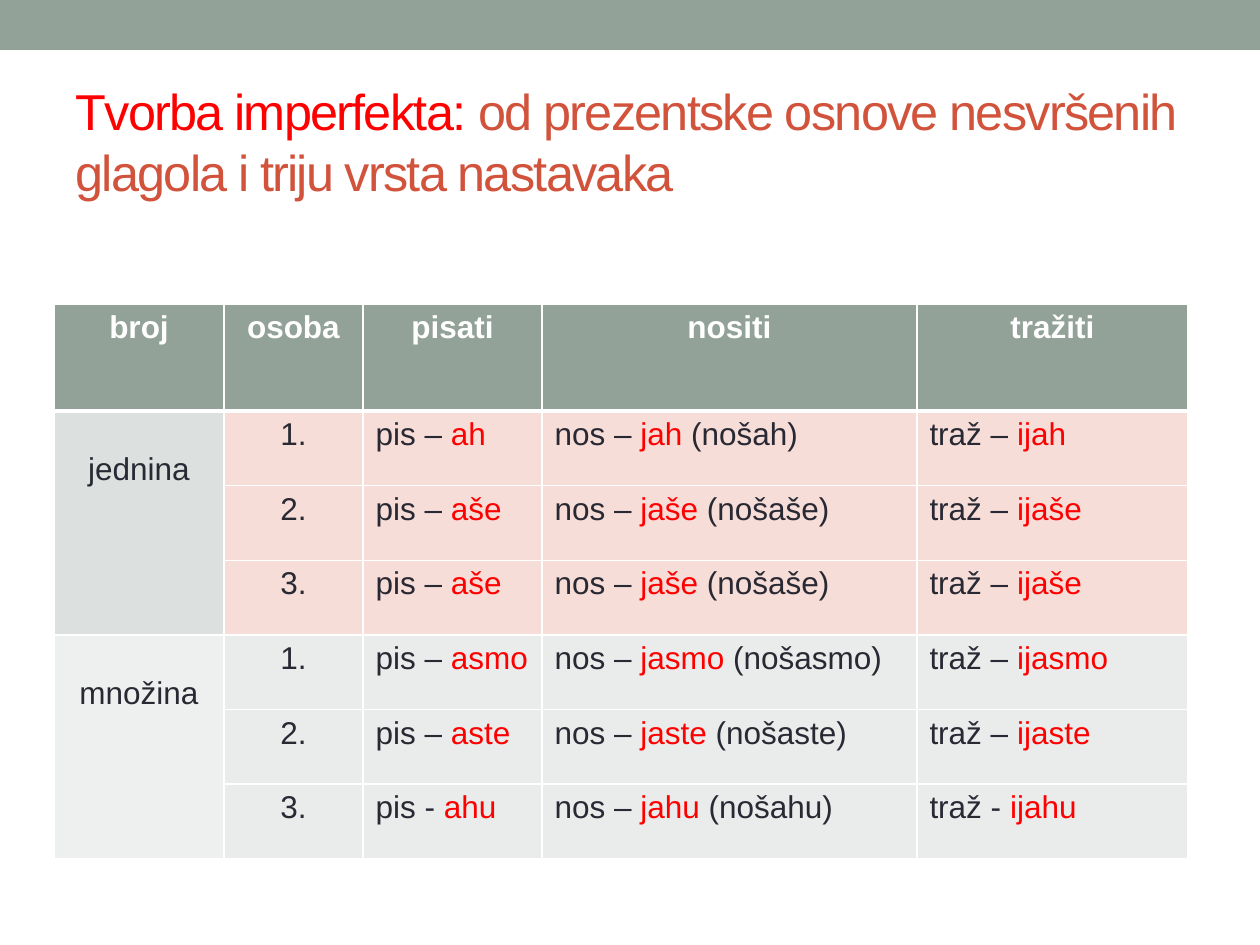
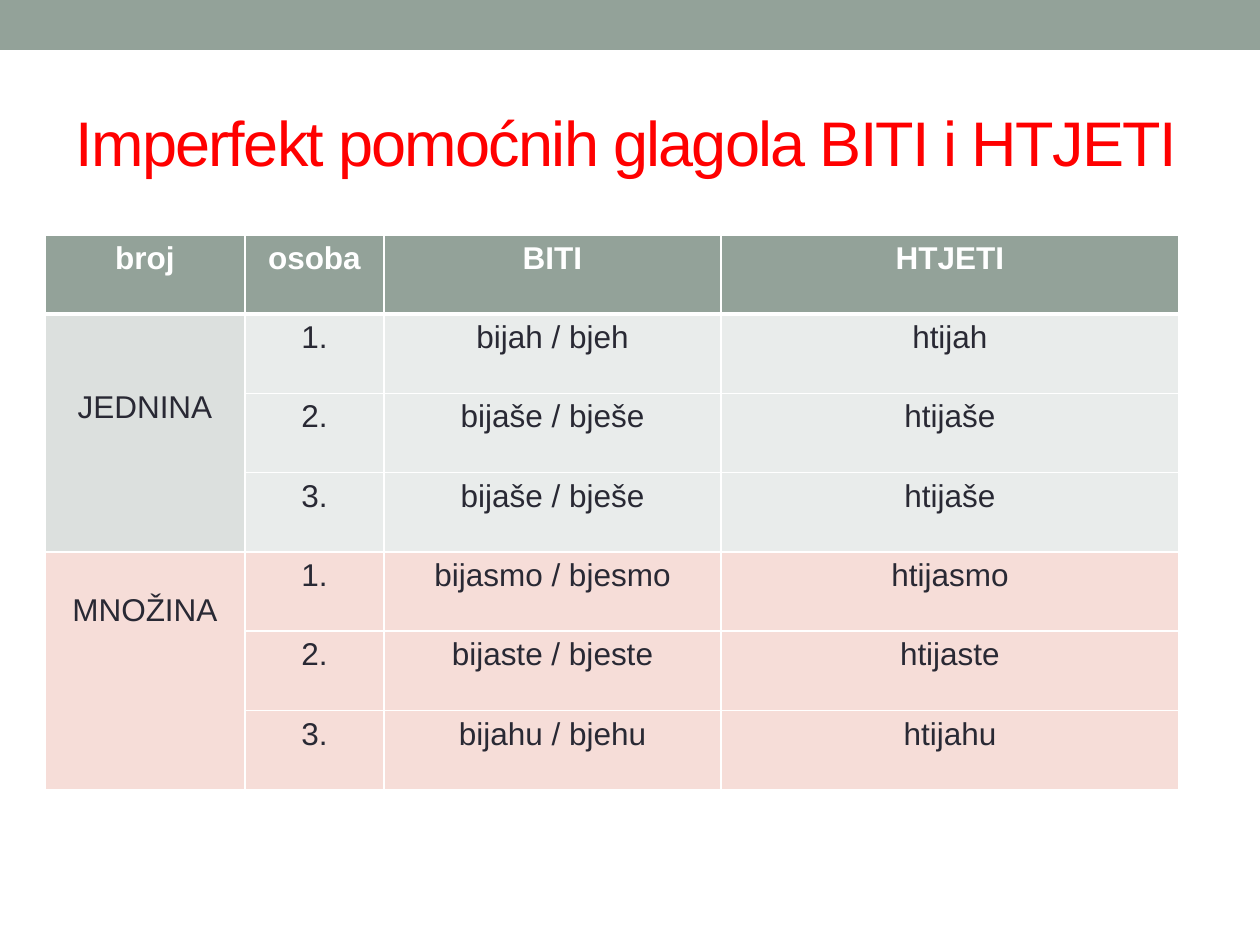
from lxml.etree import SubElement
from pptx import Presentation
from pptx.dml.color import RGBColor
from pptx.enum.shapes import MSO_SHAPE
from pptx.enum.text import MSO_ANCHOR, MSO_AUTO_SIZE, PP_ALIGN
from pptx.oxml.ns import qn
from pptx.util import Emu, Pt

COLORS = {
    "sage": "93A299", "white": "FFFFFF", "dark": "292934",
    "red": "FF0000", "rust": "D2533C", "rose": "F6DDD8",
    "mist": "E9ECEB", "pale": "EEF0EF", "grey": "DCE0DE",
}
FONT = "Arial"
SLIDE_W, SLIDE_H = 1260, 945
BAND_BOX = (0, 0, SLIDE_W, 50)
TITLE_BOX = (63, 73, 1134, 136)
CELL_TOP = 6
LINE = 35
PERSONS = ["1.", "2.", "3."]


def px(n):
    return Emu(round(n * 914400 / 126))


def rgb(name):
    return RGBColor.from_string(COLORS[name])


def add_run(p, text, color, size, bold=False):
    r = p.add_run()
    r.text = text
    r.font.name, r.font.size, r.font.bold = FONT, Pt(size), bold
    r.font.color.rgb = rgb(color)
    return r


def add_band(s, box):
    band = s.shapes.add_shape(MSO_SHAPE.RECTANGLE, *map(px, box))
    band.shadow.inherit = False
    band.fill.solid()
    band.fill.fore_color.rgb = rgb("sage")
    band.line.fill.background()


def set_title(s, box, runs, size):
    title = s.shapes.title
    title.left, title.top, title.width, title.height = map(px, box)
    tf = title.text_frame
    tf.word_wrap = True
    tf.auto_size = MSO_AUTO_SIZE.NONE
    tf.vertical_anchor = MSO_ANCHOR.MIDDLE
    p = tf.paragraphs[0]
    p.alignment = PP_ALIGN.LEFT
    for text, color in runs:
        r = add_run(p, text, color, size)
        r.font._element.set("spc", "-100")


def set_borders(cell, **widths):
    """Draw white borders, 1 pt unless a side (L, R, T, B) says otherwise."""
    tc_pr = cell._tc.get_or_add_tcPr()
    for i, side in enumerate("LRTB"):
        ln = tc_pr.makeelement(qn(f"a:ln{side}"), {"w": str(Pt(widths.get(side, 1)))})
        fill = SubElement(ln, qn("a:solidFill"))
        SubElement(fill, qn("a:srgbClr"), val=COLORS["white"])
        tc_pr.insert(i, ln)


def fill_cell(cell, runs, fill, align=PP_ALIGN.CENTER, bold=False, top=CELL_TOP):
    cell.fill.solid()
    cell.fill.fore_color.rgb = rgb(fill)
    cell.margin_top = px(top)
    p = cell.text_frame.paragraphs[0]
    p.alignment = align
    for text, color in runs:
        add_run(p, text, color, 18, bold)


def add_conjugation(s, box, cols, header_h, heads, groups, rows, align):
    """Table of verb forms; groups holds (label, lines above it, label fill, row fill)."""
    x, y, w, h = box
    n = len(rows)
    table = s.shapes.add_table(n + 1, len(cols), px(x), px(y), px(w), px(h)).table
    for column, width in zip(table.columns, cols):
        column.width = px(width)
    for i, row in enumerate(table.rows):
        row.height = px((h - header_h) / n if i else header_h)

    for c, head in enumerate(heads):
        fill_cell(table.cell(0, c), [(head, "white")], "sage", bold=True)
        set_borders(table.cell(0, c), B=3)

    for i, forms in enumerate(rows):
        group, person = divmod(i, len(PERSONS))
        label, lines, label_fill, row_fill = groups[group]
        first = table.cell(i + 1, 0)
        if person == 0:
            first.merge(table.cell(i + len(PERSONS), 0))
            fill_cell(first, [(label, "dark")], label_fill, top=CELL_TOP + lines * LINE)
        else:
            fill_cell(first, [], label_fill)
        fill_cell(table.cell(i + 1, 1), [(PERSONS[person], "dark")], row_fill)
        for c, runs in enumerate(forms, 2):
            fill_cell(table.cell(i + 1, c), runs, row_fill, align)
        for c in range(len(cols)):
            set_borders(table.cell(i + 1, c), T=1 if i else 3)


def new_slide(prs, title_runs, title_size):
    s = prs.slides.add_slide(prs.slide_layouts[5])
    add_band(s, BAND_BOX)
    set_title(s, TITLE_BOX, title_runs, title_size)
    return s


def ending_forms(ending):
    """Runs for pisati, nositi and tražiti with the ending in red."""
    dash = "-" if ending == "ahu" else "–"
    return [
        [(f"pis {dash} ", "dark"), (ending, "red")],
        [("nos – ", "dark"), (f"j{ending} ", "red"), (f"(noš{ending})", "dark")],
        [(f"traž {dash} ", "dark"), (f"ij{ending}", "red")],
    ]


def auxiliary_forms(ending):
    """Runs for biti and htjeti."""
    biti = f"bij{ending} / bj{ending.replace('a', 'e', 1)}"
    return [[(biti, "dark")], [(f"htij{ending}", "dark")]]


def main():
    prs = Presentation()
    prs.slide_width, prs.slide_height = px(SLIDE_W), px(SLIDE_H)
    endings = ["ah", "aše", "aše", "asmo", "aste", "ahu"]

    s = new_slide(prs, [
        ("Tvorba imperfekta: ", "red"),
        ("od prezentske osnove nesvršenih glagola i triju vrsta nastavaka", "rust"),
    ], 28.8)
    add_conjugation(
        s, (54, 304, 1134, 555), [170, 139, 179, 375, 271], 107,
        ["broj", "osoba", "pisati", "nositi", "tražiti"],
        [("jednina", 1, "grey", "rose"), ("množina", 1, "pale", "mist")],
        [ending_forms(e) for e in endings], PP_ALIGN.LEFT)

    s = new_slide(prs, [("Imperfekt pomoćnih glagola BITI i HTJETI", "red")], 36)
    add_conjugation(
        s, (45, 235, 1134, 555), [200, 139, 337, 458], 79,
        ["broj", "osoba", "BITI", "HTJETI"],
        [("JEDNINA", 2, "grey", "mist"), ("MNOŽINA", 1, "rose", "rose")],
        [auxiliary_forms(e) for e in endings], PP_ALIGN.CENTER)

    prs.save("out.pptx")


if __name__ == "__main__":
    main()
